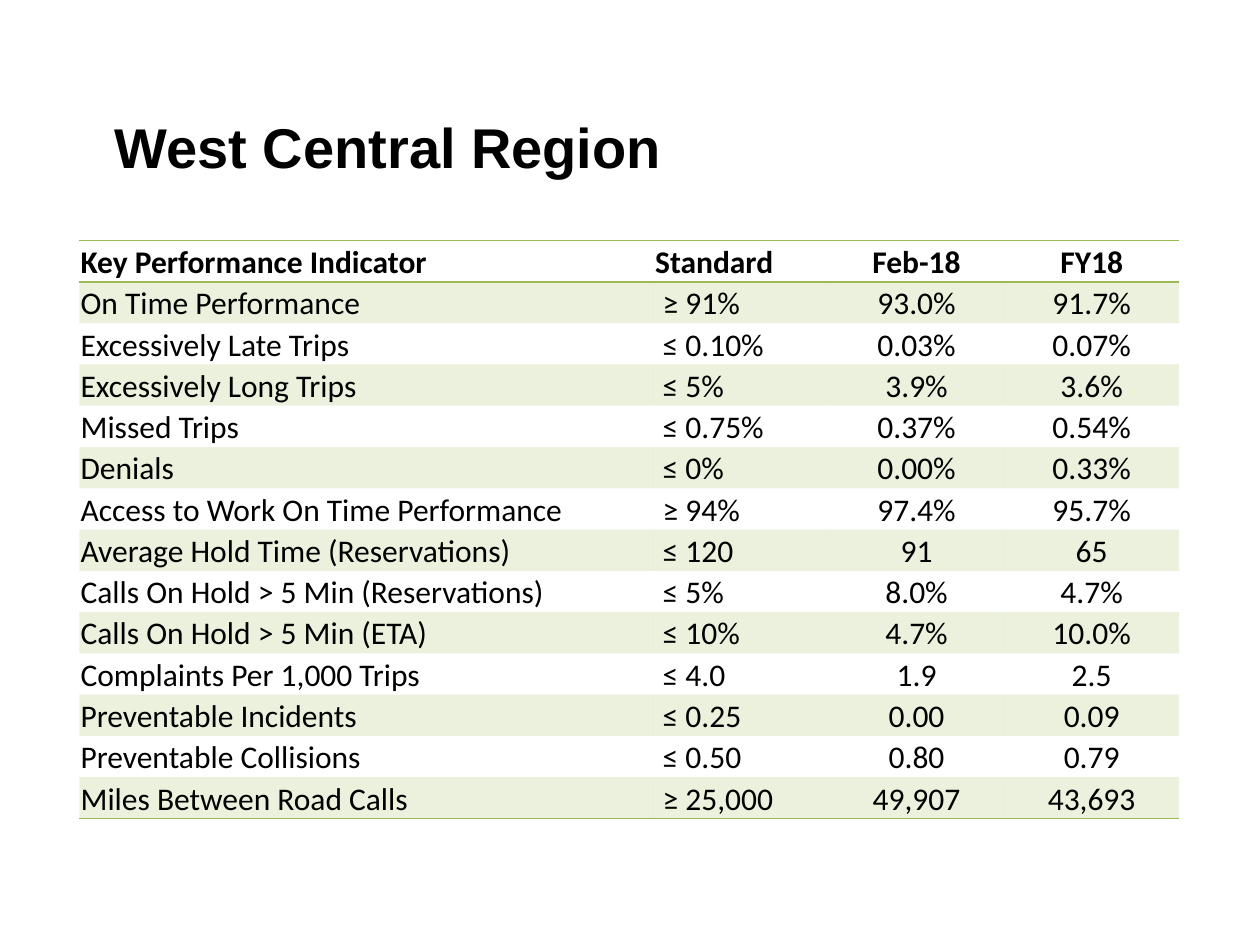
from dataclasses import dataclass

import lxml.etree
import pptx
import pptx.dml.color
import pptx.enum.text
import pptx.oxml.ns
import pptx.util

Inches = pptx.util.Inches
Align = pptx.enum.text.PP_ALIGN
Anchor = pptx.enum.text.MSO_ANCHOR
qn = pptx.oxml.ns.qn


@dataclass(frozen=True)
class Theme:
    text: str = "000000"
    accent: str = "9BBB59"
    band_opacity: int = 20
    rule_pt: float = 1
    title_font: str = "Arial"
    title_pt: float = 32
    table_font: str = "Calibri"
    table_pt: float = 18
    plain_table_style: str = "{2D5ABB26-0587-4C30-8999-92F81FD0307C}"


@dataclass(frozen=True)
class Indicator:
    name: str
    standard: str
    month: str
    year: str


@dataclass(frozen=True)
class Column:
    field: str
    width: float
    align: Align = Align.LEFT
    body_inset: float = 0.01


THEME = Theme()
INSET = 0.01
TABLE_LEFT, TABLE_TOP, TABLE_HEIGHT = 0.63, 1.91, 4.59

COLUMNS = [
    Column("name", 4.56),
    Column("standard", 1.39, body_inset=0.07),
    Column("month", 1.39, Align.CENTER),
    Column("year", 1.39, Align.CENTER),
]
HEADER = Indicator("Key Performance Indicator", "Standard", "Feb-18", "FY18")
INDICATORS = [
    Indicator("On Time Performance", "≥ 91%", "93.0%", "91.7%"),
    Indicator("Excessively Late Trips", "≤ 0.10%", "0.03%", "0.07%"),
    Indicator("Excessively Long Trips", "≤ 5%", "3.9%", "3.6%"),
    Indicator("Missed Trips", "≤ 0.75%", "0.37%", "0.54%"),
    Indicator("Denials", "≤ 0%", "0.00%", "0.33%"),
    Indicator("Access to Work On Time Performance", "≥ 94%", "97.4%", "95.7%"),
    Indicator("Average Hold Time (Reservations)", "≤ 120", "91", "65"),
    Indicator("Calls On Hold > 5 Min (Reservations)", "≤ 5%", "8.0%", "4.7%"),
    Indicator("Calls On Hold > 5 Min (ETA)", "≤ 10%", "4.7%", "10.0%"),
    Indicator("Complaints Per 1,000 Trips", "≤ 4.0", "1.9", "2.5"),
    Indicator("Preventable Incidents", "≤ 0.25", "0.00", "0.09"),
    Indicator("Preventable Collisions", "≤ 0.50", "0.80", "0.79"),
    Indicator("Miles Between Road Calls", "≥ 25,000", "49,907", "43,693"),
]


def rgb(color: str) -> pptx.dml.color.RGBColor:
    return pptx.dml.color.RGBColor.from_string(color)


def write(tf, text: str, *, font: str, size: float, bold: bool = False,
          align: Align = Align.LEFT) -> None:
    p = tf.paragraphs[0]
    p.alignment = align
    r = p.add_run()
    r.text = text
    r.font.name = font
    r.font.size = pptx.util.Pt(size)
    r.font.bold = bold
    r.font.color.rgb = rgb(THEME.text)


def add_title(s, text: str) -> None:
    sp = s.shapes.add_textbox(Inches(0.81), Inches(0.84), Inches(8.39), Inches(0.64))
    tf = sp.text_frame
    tf.word_wrap = True
    tf.vertical_anchor = Anchor.MIDDLE
    write(tf, text, font=THEME.title_font, size=THEME.title_pt, bold=True)


def fill_band(cell) -> None:
    """Tint a cell with the translucent accent colour."""
    cell.fill.solid()
    cell.fill.fore_color.rgb = rgb(THEME.accent)
    color = cell._tc.tcPr.find(qn("a:solidFill"))[0]
    lxml.etree.SubElement(color, qn("a:alpha"), val=str(THEME.band_opacity * 1000))


def add_rules(cell, edges: list[str]) -> None:
    """Draw accent borders; the schema wants them ahead of the fill."""
    for i, edge in enumerate(edges):
        ln = lxml.etree.Element(qn(f"a:{edge}"), w=str(pptx.util.Pt(THEME.rule_pt)))
        fill = lxml.etree.SubElement(ln, qn("a:solidFill"))
        lxml.etree.SubElement(fill, qn("a:srgbClr"), val=THEME.accent)
        cell._tc.get_or_add_tcPr().insert(i, ln)


def fill_cell(cell, text: str, column: Column, row: int, last_row: int) -> None:
    is_header = row == 0
    cell.margin_left = Inches(INSET if is_header else column.body_inset)
    cell.margin_right = cell.margin_top = Inches(INSET)
    cell.margin_bottom = 0
    cell.vertical_anchor = Anchor.BOTTOM
    write(cell.text_frame, text, font=THEME.table_font, size=THEME.table_pt,
          bold=is_header, align=column.align)
    if row % 2:
        fill_band(cell)
    else:
        cell.fill.background()
    if is_header:
        add_rules(cell, ["lnT", "lnB"])
    elif row == last_row:
        add_rules(cell, ["lnB"])


def add_indicator_table(s, records: list[Indicator]) -> None:
    width = sum(column.width for column in COLUMNS)
    table = s.shapes.add_table(len(records), len(COLUMNS), Inches(TABLE_LEFT),
                               Inches(TABLE_TOP), Inches(width),
                               Inches(TABLE_HEIGHT)).table
    table.horz_banding = False
    table._tbl.tblPr.find(qn("a:tableStyleId")).text = THEME.plain_table_style
    for i, column in enumerate(COLUMNS):
        table.columns[i].width = Inches(column.width)
        for row, record in enumerate(records):
            fill_cell(table.cell(row, i), getattr(record, column.field), column,
                      row, len(records) - 1)


def main() -> None:
    prs = pptx.Presentation()
    prs.slide_width, prs.slide_height = Inches(10), Inches(7.5)
    s = prs.slides.add_slide(prs.slide_layouts[6])
    add_title(s, "West Central Region")
    add_indicator_table(s, [HEADER, *INDICATORS])
    prs.save("out.pptx")


if __name__ == "__main__":
    main()
